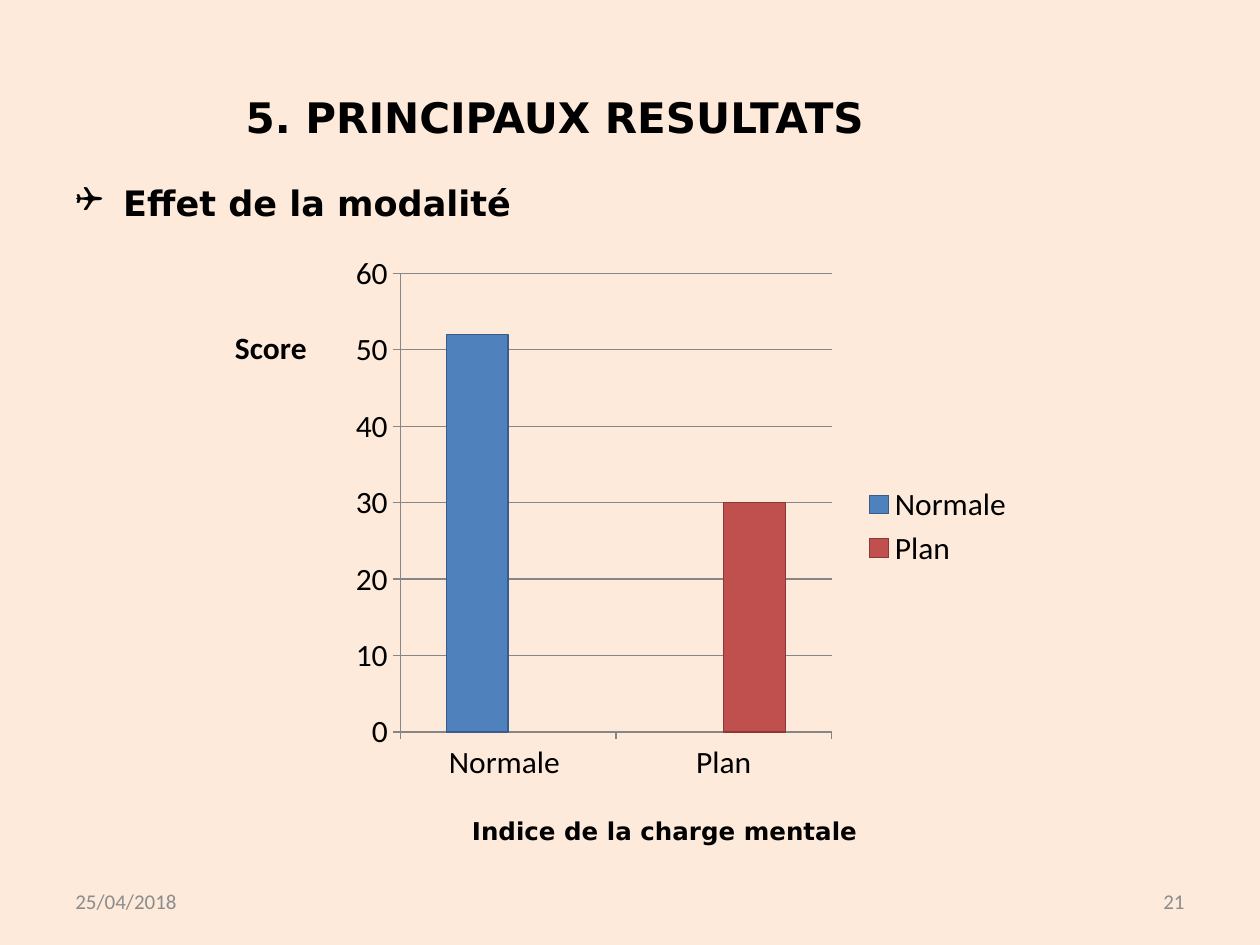
from lxml import etree
from pptx import Presentation
from pptx.chart.data import CategoryChartData
from pptx.dml.color import RGBColor
from pptx.enum.chart import XL_CHART_TYPE as ChartType
from pptx.enum.chart import XL_LEGEND_POSITION as LegendPos
from pptx.enum.chart import XL_TICK_MARK as Tick
from pptx.enum.text import MSO_ANCHOR as Anchor
from pptx.enum.text import PP_ALIGN as Align
from pptx.oxml.ns import qn
from pptx.util import Inches, Pt

CREAM = RGBColor(0xFD, 0xEA, 0xDA)
BLACK = RGBColor(0, 0, 0)
GRAY = RGBColor(0x8C, 0x8C, 0x8C)
AXIS_GRAY = RGBColor(0x86, 0x86, 0x86)
BLUE = RGBColor(0x4F, 0x81, 0xBD)
DARK_BLUE = RGBColor(0x38, 0x5D, 0x8A)
RED = RGBColor(0xC0, 0x50, 0x4D)
DARK_RED = RGBColor(0x8C, 0x38, 0x36)
HEADING_FONT = "DejaVu Sans"
BODY_FONT = "Calibri"


def style_font(font, size, name=BODY_FONT, color=BLACK, bold=False):
    """Set the face, size, colour and weight of a font."""
    font.name, font.size, font.bold = name, Pt(size), bold
    font.color.rgb = color


def fill_text(frame, text, size, align=Align.LEFT, anchor=Anchor.TOP, **style):
    """Write one styled run in a text frame and return its paragraph."""
    frame.word_wrap = True
    frame.vertical_anchor = anchor
    paragraph = frame.paragraphs[0]
    paragraph.alignment = align
    run = paragraph.add_run()
    run.text = text
    style_font(run.font, size, **style)
    return paragraph


def add_label(slide, box, text, size, **style):
    """Add a text box and return its paragraph."""
    return fill_text(slide.shapes.add_textbox(*box).text_frame, text, size, **style)


def place_title(slide, box):
    """Move and format the title placeholder."""
    title = slide.shapes.title
    title.left, title.top, title.width, title.height = box
    title.fill.solid()
    title.fill.fore_color.rgb = CREAM
    fill_text(title.text_frame, "5. PRINCIPAUX RESULTATS", 24,
              anchor=Anchor.MIDDLE, name=HEADING_FONT, bold=True)


def add_topic(slide, box):
    """Add the bulleted topic line."""
    topic = add_label(slide, box, "Effet de la modalité", 20,
                      name=HEADING_FONT, bold=True)
    props = topic._p.get_or_add_pPr()
    props.set("marL", str(Inches(0.38)))
    props.set("indent", str(-Inches(0.38)))
    etree.SubElement(props, qn("a:buFont"), typeface="Wingdings")
    etree.SubElement(props, qn("a:buChar"), char="❑")


def set_layout(parent, index, **settings):
    """Give a chart part a manual layout at a child index."""
    for old in parent.findall(qn("c:layout")):
        parent.remove(old)
    layout = etree.Element(qn("c:layout"))
    manual = etree.SubElement(layout, qn("c:manualLayout"))
    for tag, value in settings.items():
        etree.SubElement(manual, qn(f"c:{tag}"), val=str(value))
    parent.insert(index, layout)


def style_axis_line(line):
    """Draw an axis or grid line in thin gray."""
    line.color.rgb = AXIS_GRAY
    line.width = Pt(0.75)


def format_axes(chart):
    """Format both axes and the score title."""
    scores = chart.value_axis
    for axis in (chart.category_axis, scores):
        axis.major_tick_mark = Tick.OUTSIDE
        axis.minor_tick_mark = Tick.NONE
        style_font(axis.tick_labels.font, 18)
        style_axis_line(axis.format.line)
    scores.minimum_scale, scores.maximum_scale, scores.major_unit = 0, 60, 10
    scores.has_major_gridlines = True
    style_axis_line(scores.major_gridlines.format.line)
    score_title = scores.axis_title
    fill_text(score_title.text_frame, "Score", 18, align=Align.CENTER, bold=True)
    body = score_title._element.find(".//" + qn("a:bodyPr"))
    body.set("rot", "0")
    body.set("vert", "horz")
    set_layout(score_title._element, 1, xMode="edge", yMode="edge", x=0.02, y=0.11)


def add_score_chart(slide, box):
    """Add the column chart of scores by modality."""
    data = CategoryChartData()
    data.categories = ["Normale ", "Plan"]
    data.add_series("Normale", (52, None))
    data.add_series("Plan", (None, 30))
    chart = slide.shapes.add_chart(ChartType.COLUMN_CLUSTERED, *box, data).chart
    style_font(chart.font, 18)
    chart.has_title = False
    chart.has_legend = True
    chart.legend.position = LegendPos.RIGHT
    chart.legend.include_in_layout = False
    style_font(chart.legend.font, 18)
    plot = chart.plots[0]
    plot.gap_width, plot.overlap, plot.vary_by_categories = 150, 0, False
    for series, fill, edge in zip(plot.series, (BLUE, RED), (DARK_BLUE, DARK_RED)):
        series.format.fill.solid()
        series.format.fill.fore_color.rgb = fill
        series.format.line.color.rgb = edge
        series.format.line.width = Pt(0.75)
    format_axes(chart)
    set_layout(chart._chartSpace.chart.plotArea, 0, layoutTarget="inner",
               xMode="edge", yMode="edge", x=0.23, y=0.02, w=0.53, h=0.87)


def add_footer(slide, left, top, width, height):
    """Add the date and page number at the two ends of the footer."""
    part_width = Inches(2.33)
    style = dict(anchor=Anchor.MIDDLE, color=GRAY)
    add_label(slide, (left, top, part_width, height), "25/04/2018", 12, **style)
    add_label(slide, (left + width - part_width, top, part_width, height),
              "21", 12, align=Align.RIGHT, **style)


def main():
    """Build and save the results slide."""
    deck = Presentation()
    deck.slide_width, deck.slide_height = Inches(10), Inches(7.5)
    slide = deck.slides.add_slide(deck.slide_layouts[5])
    slide.background.fill.solid()
    slide.background.fill.fore_color.rgb = CREAM
    place_title(slide, [Inches(n) for n in (1.85, 0.3, 6.06, 1.25)])
    add_topic(slide, [Inches(n) for n in (0.5, 1.39, 9, 5.31)])
    add_label(slide, [Inches(n) for n in (2.4, 6.43, 5.75, 0.34)],
              "Indice de la charge mentale", 14, align=Align.CENTER,
              name=HEADING_FONT, bold=True)
    add_score_chart(slide, [Inches(n) for n in (1.69, 2.02, 6.46, 4.25)])
    add_footer(slide, *[Inches(n) for n in (0.5, 6.95, 9, 0.4)])
    deck.save("out.pptx")


if __name__ == "__main__":
    main()
